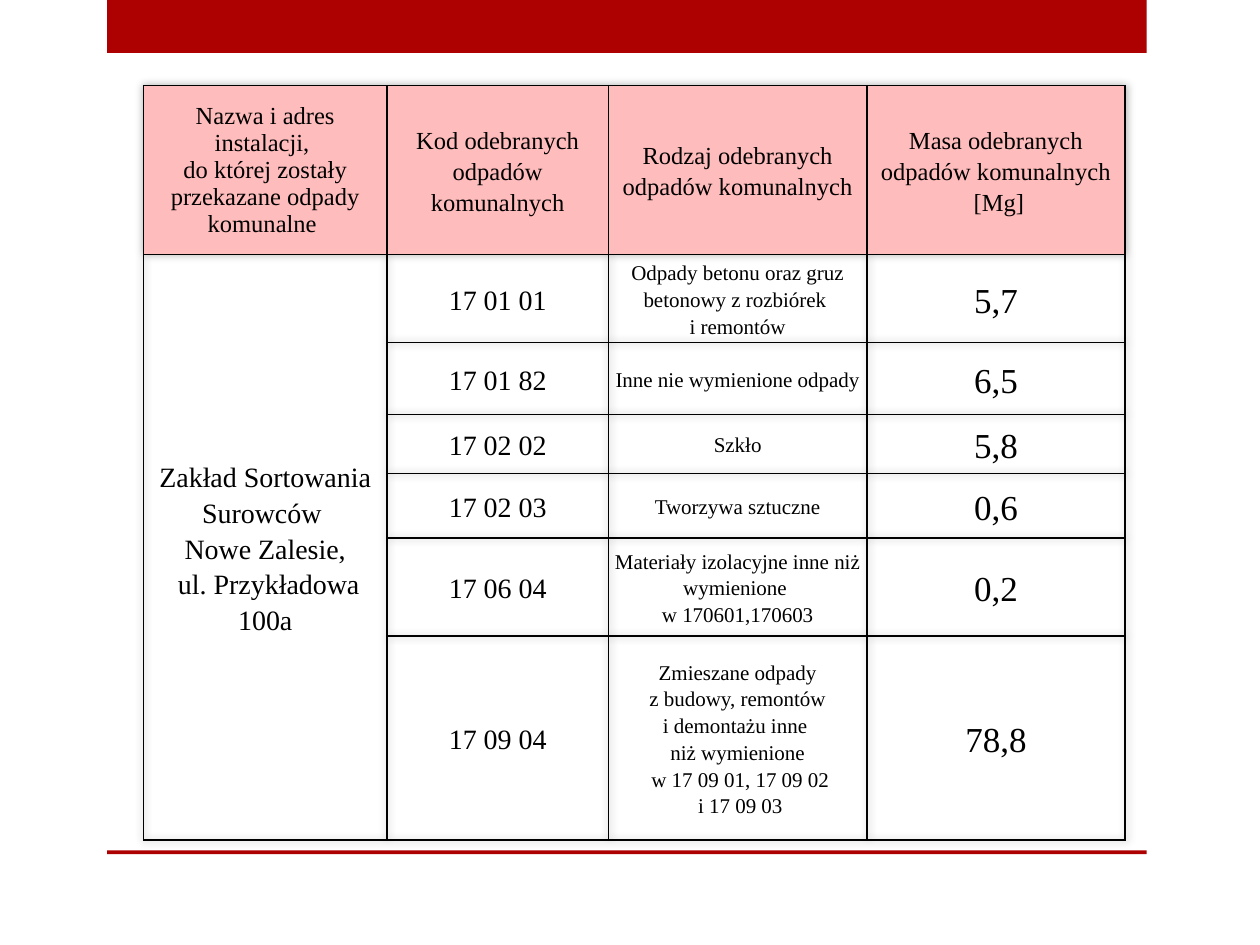
import copy

import pptx
import pptx.dml.color
import pptx.enum.shapes
import pptx.enum.text
import pptx.oxml
import pptx.oxml.ns
import pptx.util

Inches = pptx.util.Inches
Pt = pptx.util.Pt
RED = pptx.dml.color.RGBColor(0xAD, 0x01, 0x01)
PINK = pptx.dml.color.RGBColor(0xFF, 0xBC, 0xBC)
BLACK = pptx.dml.color.RGBColor(0x00, 0x00, 0x00)

CELL_FORMAT = {
    "margin_left": Inches(0.05),
    "margin_right": Inches(0.05),
    "margin_top": 0,
    "margin_bottom": 0,
    "vertical_anchor": pptx.enum.text.MSO_ANCHOR.MIDDLE,
}
COLUMN_WIDTHS = [1.93, 1.76, 2.05, 2.05]
ROW_HEIGHTS = [1.34, 0.7, 0.57, 0.47, 0.51, 0.78, 1.62]
BODY_SIZES = [16, 16, 12, 20]
HEADINGS = [
    "Nazwa i adres instalacji, \vdo której zostały przekazane odpady komunalne ",
    "Kod odebranych odpadów komunalnych",
    "Rodzaj odebranych odpadów komunalnych",
    "Masa odebranych odpadów komunalnych\n [Mg]",
]
FACILITY = "Zakład Sortowania Surowców \vNowe Zalesie,\n ul. Przykładowa 100a"
WASTE = [
    ("17 01 01", "Odpady betonu oraz gruz betonowy z rozbiórek \vi remontów", "5,7"),
    ("17 01 82", "Inne nie wymienione odpady", "6,5"),
    ("17 02 02", "Szkło", "5,8"),
    ("17 02 03", "Tworzywa sztuczne", "0,6"),
    ("17 06 04", "Materiały izolacyjne inne niż wymienione \vw 170601,170603", "0,2"),
    (
        "17 09 04",
        "Zmieszane odpady\v z budowy, remontów \vi demontażu inne \vniż wymienione"
        "\v w 17 09 01, 17 09 02\v i 17 09 03",
        "78,8",
    ),
]
NAMESPACE = 'xmlns:a="http://schemas.openxmlformats.org/drawingml/2006/main"'
SHADOW = (
    f'<a:effectLst {NAMESPACE}><a:outerShdw blurRad="63500" dist="0" dir="0">'
    '<a:srgbClr val="000000"><a:alpha val="30000"/></a:srgbClr>'
    "</a:outerShdw></a:effectLst>"
)


def add_borders(cell):
    properties = cell._tc.get_or_add_tcPr()
    for position, side in enumerate(("lnL", "lnR", "lnT", "lnB")):
        border = pptx.oxml.parse_xml(
            f'<a:{side} {NAMESPACE} w="{Pt(1)}"><a:solidFill>'
            f'<a:srgbClr val="{BLACK}"/></a:solidFill></a:{side}>'
        )
        properties.insert(position, border)


def write_cell(cell, content, size, spacing):
    cell.text = content
    for paragraph in cell.text_frame.paragraphs:
        paragraph.alignment = pptx.enum.text.PP_ALIGN.CENTER
        paragraph.line_spacing = spacing
        for run in paragraph.runs:
            run.font.name = "Times New Roman"
            run.font.size = Pt(size)
            run.font.color.rgb = BLACK
        for line_break in paragraph._p.findall(pptx.oxml.ns.qn("a:br")):
            line_break.insert(0, copy.deepcopy(paragraph.runs[0]._r.rPr))


deck = pptx.Presentation()
deck.slide_width = Inches(10)
deck.slide_height = Inches(7.5)
slide = deck.slides.add_slide(deck.slide_layouts[6])

for top, height in ((0, 0.42), (6.75, 0.03)):
    band = slide.shapes.add_shape(
        pptx.enum.shapes.MSO_SHAPE.RECTANGLE,
        Inches(0.85), Inches(top), Inches(8.25), Inches(height),
    )
    band.shadow.inherit = False
    band.fill.solid()
    band.fill.fore_color.rgb = RED
    band.line.fill.background()

waste_table = slide.shapes.add_table(
    len(ROW_HEIGHTS), len(COLUMN_WIDTHS),
    Inches(1.14), Inches(0.68), Inches(7.8), Inches(5.98),
).table
waste_table.horz_banding = False
waste_table.first_row = False
waste_table._tbl.tblPr.insert(0, pptx.oxml.parse_xml(SHADOW))
for column, width in zip(waste_table.columns, COLUMN_WIDTHS):
    column.width = Inches(width)
for row, height in zip(waste_table.rows, ROW_HEIGHTS):
    row.height = Inches(height)

for cell in waste_table.iter_cells():
    for attribute, value in CELL_FORMAT.items():
        setattr(cell, attribute, value)
    cell.fill.background()
    add_borders(cell)

for index, heading in enumerate(HEADINGS):
    heading_cell = waste_table.cell(0, index)
    heading_cell.fill.solid()
    heading_cell.fill.fore_color.rgb = PINK
    write_cell(heading_cell, heading, 14, 1.15 if index else 1.0)

waste_table.cell(1, 0).merge(waste_table.cell(len(WASTE), 0))
write_cell(waste_table.cell(1, 0), FACILITY, BODY_SIZES[0], 1.15)
for row_index, entry in enumerate(WASTE, start=1):
    for column_index, content in enumerate(entry, start=1):
        write_cell(
            waste_table.cell(row_index, column_index),
            content, BODY_SIZES[column_index], 1.15,
        )

deck.save("out.pptx")
